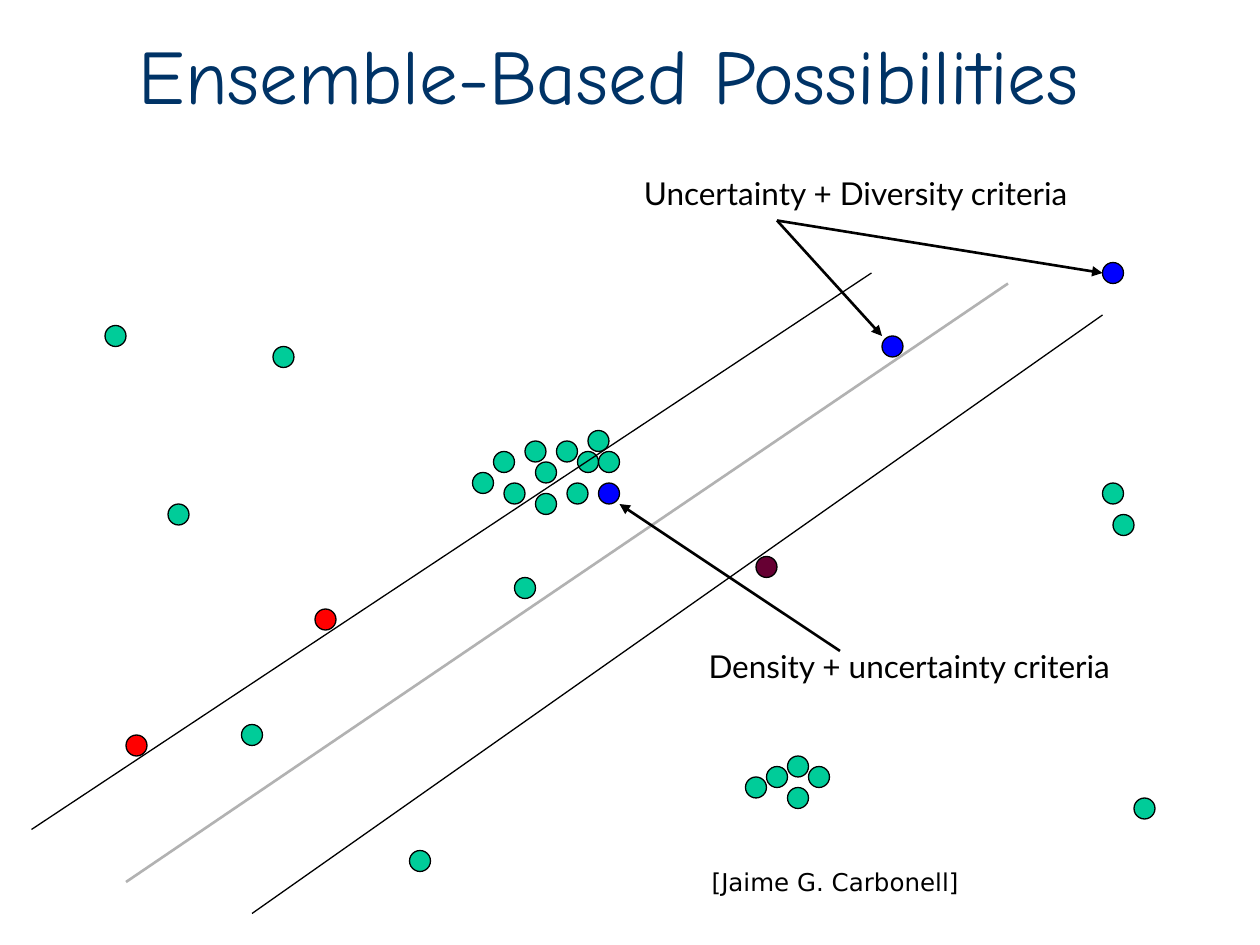
from pptx import Presentation
from pptx.dml.color import RGBColor
from pptx.enum.shapes import MSO_CONNECTOR, MSO_SHAPE
from pptx.enum.text import MSO_ANCHOR, PP_ALIGN
from pptx.oxml.ns import qn
from pptx.util import Pt
from lxml import etree

PX = 7620  # 120 px to the inch
DOT = 20
OVAL = MSO_SHAPE.OVAL
STRAIGHT = MSO_CONNECTOR.STRAIGHT
LEFT, CENTER = PP_ALIGN.LEFT, PP_ALIGN.CENTER
TOP, MIDDLE = MSO_ANCHOR.TOP, MSO_ANCHOR.MIDDLE

COLORS = {
    "title": "003366",
    "ink": "000000",
    "separator": "B2B2B2",
    "unlabeled": "00CC99",
    "positive": "FF0000",
    "negative": "660033",
    "selected": "0000FF",
}

# Top-left corners of the dots, relative to the plot
SAMPLES = {
    "unlabeled": [
        # scattered
        (100, 110), (260, 130), (160, 280), (230, 490), (490, 350),
        (390, 610), (1050, 260), (1060, 290), (1080, 560),
        # dense cluster
        (450, 250), (470, 230), (480, 260), (500, 220), (510, 240),
        (510, 270), (530, 220), (540, 260), (560, 210), (550, 230),
        (570, 230),
        # small cluster
        (710, 540), (730, 530), (750, 520), (770, 530), (750, 550),
    ],
    "positive": [(300, 380), (120, 500)],
    "negative": [(720, 330)],
    "selected": [(570, 260), (1050, 50), (840, 120)],
}

# Start, end, colour and width in points
BOUNDARIES = [
    ((30, 590), (830, 60), "ink", 0.75),
    ((240, 670), (1050, 100), "ink", 0.75),
    ((120, 640), (960, 70), "separator", 1.5),
]


def rgb(name):
    return RGBColor.from_string(COLORS[name])


def add_text(slide, box, text, font, size, color="ink", align=CENTER,
             anchor=TOP, wrap=True):
    frame = slide.shapes.add_textbox(*(v * PX for v in box)).text_frame
    frame.word_wrap = wrap
    frame.vertical_anchor = anchor
    paragraph = frame.paragraphs[0]
    paragraph.text = text
    paragraph.alignment = align
    paragraph.font.name = font
    paragraph.font.size = Pt(size)
    paragraph.font.color.rgb = rgb(color)


def add_line(slide, box, start, end, color, width, arrow=False):
    """Draw a line between two points given relative to the box."""
    left, top = box[:2]
    ends = (left + start[0], top + start[1], left + end[0], top + end[1])
    line = slide.shapes.add_connector(STRAIGHT, *(v * PX for v in ends))
    line.line.color.rgb = rgb(color)
    line.line.width = Pt(width)
    if arrow:
        outline = line.line._get_or_add_ln()
        etree.SubElement(outline, qn("a:tailEnd"), type="triangle")
    etree.SubElement(line._element.spPr, qn("a:effectLst"))


def add_dot(slide, box, corner, color):
    left, top = box[0] + corner[0], box[1] + corner[1]
    dot = slide.shapes.add_shape(OVAL, left * PX, top * PX, DOT * PX, DOT * PX)
    dot.shadow.inherit = False
    dot.fill.solid()
    dot.fill.fore_color.rgb = rgb(color)
    dot.line.color.rgb = rgb("ink")
    dot.line.width = Pt(0.75)


def add_plot(slide, box):
    for label, corners in SAMPLES.items():
        for corner in corners:
            add_dot(slide, box, corner, label)
    for start, end, color, width in BOUNDARIES:
        add_line(slide, box, start, end, color, width)


def add_callout(slide, box, text, start, targets, wrap=True):
    """Place a label and arrows that run from one point to each target."""
    add_text(slide, box, text, "Lato", 18, wrap=wrap)
    for target in targets:
        add_line(slide, box, start, target, "ink", 1.5, arrow=True)


def main():
    deck = Presentation()
    deck.slide_width, deck.slide_height = 1200 * PX, 900 * PX
    slide = deck.slides.add_slide(deck.slide_layouts[6])

    add_text(slide, (40, 20, 1080, 100), "Ensemble-Based Possibilities",
             "Comic Neue", 44, color="title", anchor=MIDDLE)
    add_plot(slide, (0, 200, 1200, 700))
    add_callout(slide, (550, 160, 530, 48), "Uncertainty + Diversity criteria",
                (190, 50), [(290, 160), (500, 100)])
    add_callout(slide, (660, 610, 412, 48), "Density + uncertainty criteria",
                (140, 10), [(-70, -130)], wrap=False)
    add_text(slide, (666, 820, 380, 60), "[Jaime G. Carbonell]",
             "DejaVu Sans", 14, align=LEFT)
    deck.save("out.pptx")


if __name__ == "__main__":
    main()
